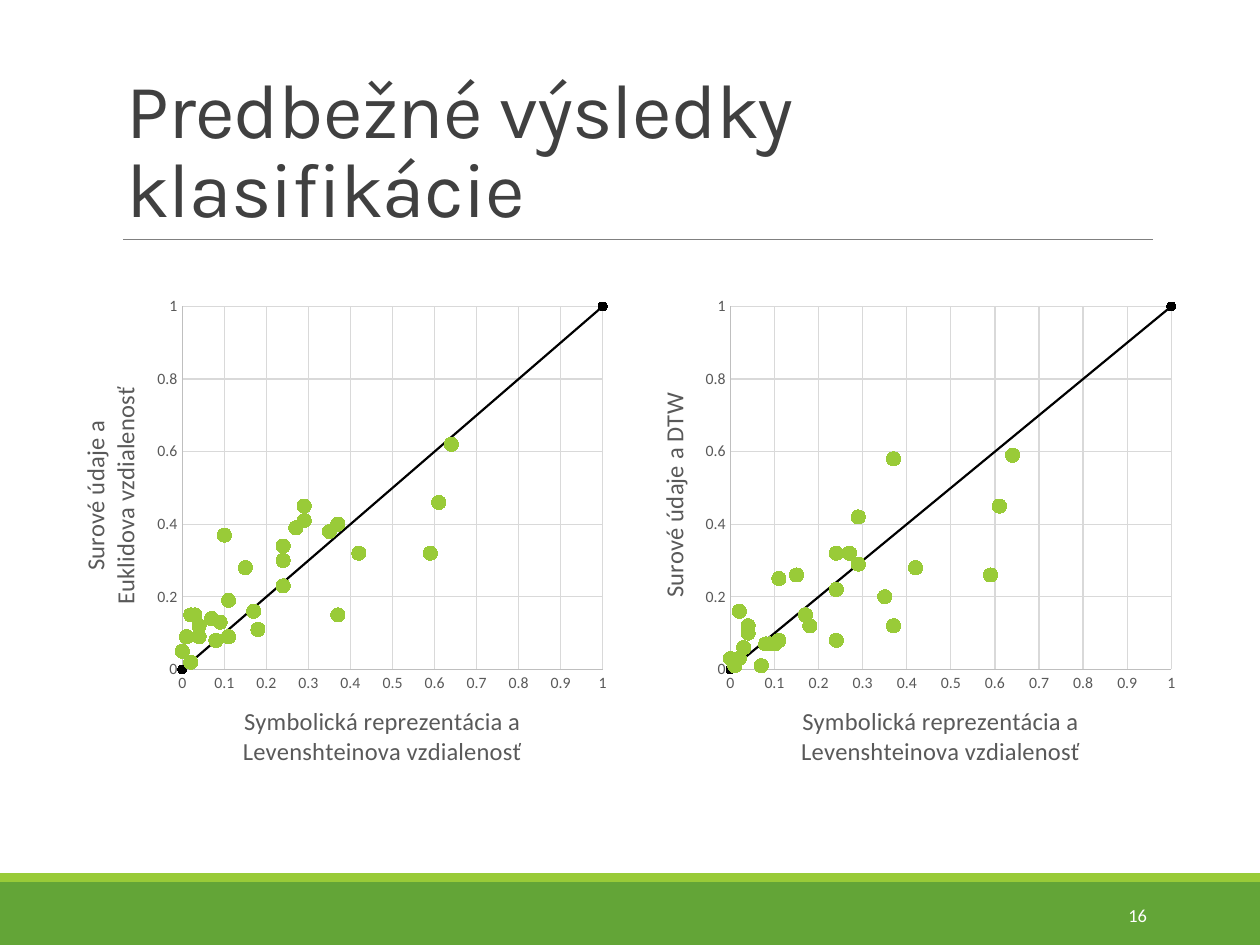
from dataclasses import dataclass

from lxml.etree import SubElement
from pptx import Presentation
from pptx.chart.data import XyChartData
from pptx.dml.color import RGBColor
from pptx.enum.chart import XL_CHART_TYPE as ChartType, XL_MARKER_STYLE as Marker
from pptx.enum.chart import XL_TICK_MARK as Tick
from pptx.enum.shapes import MSO_CONNECTOR as Connector, MSO_SHAPE as Shape
from pptx.enum.text import MSO_ANCHOR as Anchor, PP_ALIGN as Align
from pptx.oxml.ns import qn
from pptx.util import Inches, Pt


@dataclass(frozen=True)
class Theme:
    green: str = "63A537"
    lime: str = "99CB38"
    rule: str = "808080"
    heading: str = "404040"
    label: str = "595959"
    axis: str = "BFBFBF"
    grid: str = "D9D9D9"
    black: str = "000000"
    white: str = "FFFFFF"
    heading_font: str = "Karla"
    body_font: str = "Calibri"
    heading_size: float = 44
    axis_title_size: float = 14
    number_size: float = 10.5
    chart_size: float = 10
    tick_size: float = 9


@dataclass(frozen=True)
class Area:
    """A place on the slide grid of 100 columns by 75 rows."""
    column: float
    row: float
    columns: float
    rows: float

    def lengths(self) -> list[int]:
        return [Inches(n / 10) for n in (self.column, self.row, self.columns, self.rows)]


@dataclass(frozen=True)
class ScatterPanel:
    """Layouts are shares of the chart's own size."""
    area: Area
    y_title: str
    y_values: tuple[float, ...]
    plot: dict[str, float]
    x_title_at: dict[str, float]
    y_title_at: dict[str, float]


THEME = Theme()
X_TITLE = "Symbolická reprezentácia a\nLevenshteinova vzdialenosť"
# None marks a data set without a symbolic result
X_VALUES = (0.29, 0.61, 0.37, 0.15, 0.01, None, None, 0.11, 0.02, 0.17,
            0.04, 0.02, 0.24, 0.59, 0.03, 0.64, None, None, 0.24, 0.35,
            None, 0.42, 0.18, 0.37, 0.29, 0, 0.08, 0.11, None, 0.24,
            0.04, 0.07, 0.1, 0.09, None, None, 0.27, None)
PANELS = (
    ScatterPanel(
        Area(50, 22.7, 44.3, 40.6), "Surové údaje a DTW",
        (0.29, 0.45, 0.58, 0.26, 0.01, 0.35, 0, 0.25, 0.03, 0.15,
         0.12, 0.16, 0.08, 0.26, 0.06, 0.59, 0.6, 0.06, 0.32, 0.2,
         0.04, 0.28, 0.12, 0.12, 0.42, 0.03, 0.07, 0.08, 0, 0.22,
         0.1, 0.01, 0.07, 0.07, 0, 0, 0.32, 0.15),
        {"x": 0.18, "y": 0.04, "w": 0.79, "h": 0.71},
        {"x": 0.3, "y": 0.81}, {"x": 0.04, "y": 0.2}),
    ScatterPanel(
        Area(4.1, 22.7, 45.1, 40.6), "Surové údaje a\nEuklidova vzdialenosť",
        (0.41, 0.46, 0.4, 0.28, 0.09, 0.35, 0.05, 0.19, 0.02, 0.16,
         0.12, 0.15, 0.23, 0.32, 0.15, 0.62, 0.66, 0.04, 0.34, 0.38,
         0.03, 0.32, 0.11, 0.15, 0.45, 0.05, 0.08, 0.09, 0.14, 0.3,
         0.09, 0.14, 0.37, 0.13, 0.1, 0.01, 0.39, 0.16),
        {"x": 0.23, "y": 0.04, "w": 0.74, "h": 0.71},
        {"x": 0.33, "y": 0.81}, {"x": 0.04, "y": 0.19}),
)


def apply(target, **values) -> None:
    for name, value in values.items():
        setattr(target, name, value)


def style_font(font, name: str, size: float, color: str) -> None:
    apply(font, name=name, size=Pt(size), bold=False)
    font.color.rgb = RGBColor.from_string(color)


def style_fill(fill, color: str) -> None:
    fill.solid()
    fill.fore_color.rgb = RGBColor.from_string(color)


def style_line(line, color: str, width: float) -> None:
    style_fill(line.fill, color)
    line.width = Pt(width)


def add_band(page, area: Area, color: str) -> None:
    band = page.shapes.add_shape(Shape.RECTANGLE, *area.lengths())
    band.shadow.inherit = False
    style_fill(band.fill, color)
    band.line.fill.background()


def add_rule(page, area: Area) -> None:
    left, top, width, height = area.lengths()
    rule = page.shapes.add_connector(Connector.STRAIGHT, left, top, left + width, top + height)
    style_line(rule.line, THEME.rule, 0.5)
    SubElement(rule._element.spPr, qn("a:effectLst"))


def add_text(page, area: Area, text: str, font: tuple, anchor, align, spacing: float = 1):
    box = page.shapes.add_textbox(*area.lengths())
    apply(box.text_frame, word_wrap=True, vertical_anchor=anchor)
    para = box.text_frame.paragraphs[0]
    apply(para, alignment=align, line_spacing=spacing)
    span = para.add_run()
    span.text = text
    style_font(span.font, *font)
    return span


def set_layout(parent, shares: dict[str, float], inner: bool = False) -> None:
    manual = SubElement(parent.find(qn("c:layout")), qn("c:manualLayout"))
    settings = {"layoutTarget": "inner"} if inner else {}
    settings |= {f"{key}Mode": "edge" for key in ("x", "y")} | shares
    for tag, value in settings.items():
        SubElement(manual, qn(f"c:{tag}")).set("val", str(value))


def style_axis(axis, title: str, title_at: dict[str, float], step: float, turn: int) -> None:
    apply(axis, minimum_scale=0, maximum_scale=1, major_unit=step, has_major_gridlines=True,
          major_tick_mark=Tick.NONE, minor_tick_mark=Tick.NONE)
    style_line(axis.format.line, THEME.axis, 0.75)
    style_line(axis.major_gridlines.format.line, THEME.grid, 0.75)
    apply(axis.tick_labels, number_format="General", number_format_is_linked=False)
    style_font(axis.tick_labels.font, THEME.body_font, THEME.tick_size, THEME.label)
    frame = axis.axis_title.text_frame
    frame.text = title
    frame._txBody.bodyPr.set("rot", str(turn * 60000))
    for para in frame.paragraphs:
        style_font(para.font, THEME.body_font, THEME.axis_title_size, THEME.label)
    set_layout(axis.axis_title._element, title_at)


def style_marker(marker, size: int, color: str) -> None:
    apply(marker, style=Marker.CIRCLE, size=size)
    style_fill(marker.format.fill, color)
    marker.format.line.fill.background()


def add_scatter(page, panel: ScatterPanel) -> None:
    data = XyChartData()
    sources = {"Series 1": zip(X_VALUES, panel.y_values), "Series 2": ((0, 0), (1, 1))}
    for name, points in sources.items():
        series = data.add_series(name)
        for x, y in points:
            series.add_data_point(x, y)
    chart = page.shapes.add_chart(ChartType.XY_SCATTER, *panel.area.lengths(), data).chart
    apply(chart, has_title=False, has_legend=False)
    style_font(chart.font, THEME.body_font, THEME.chart_size, THEME.black)
    chart.plots[0].vary_by_categories = False
    style_axis(chart.category_axis, X_TITLE, panel.x_title_at, 0.1, 0)
    style_axis(chart.value_axis, panel.y_title, panel.y_title_at, 0.2, -90)

    # Measured points and the line of equal results
    measured, diagonal = chart.plots[0].series
    measured.format.line.fill.background()
    style_marker(measured.marker, 8, THEME.lime)
    style_line(diagonal.format.line, THEME.black, 1.25)
    style_marker(diagonal.marker, 5, THEME.black)

    # Missing values become gaps
    for point in list(measured._element.iter(qn("c:pt"))):
        if point.findtext(qn("c:v")) == "None":
            point.getparent().remove(point)

    plot_area = chart._chartSpace.chart.plotArea
    if plot_area.find(qn("c:layout")) is None:
        plot_area.insert(0, plot_area.makeelement(qn("c:layout")))
    set_layout(plot_area, panel.plot, inner=True)


def main() -> None:
    deck = Presentation()
    apply(deck, slide_width=Inches(10), slide_height=Inches(7.5))
    page = deck.slides.add_slide(deck.slide_layouts[6])

    # Footer bands and title rule
    add_band(page, Area(0, 70, 100, 5), THEME.green)
    add_band(page, Area(0, 69.3, 100, 0.7), THEME.lime)
    add_rule(page, Area(9.8, 19, 81.7, 0))

    # Title
    title = add_text(page, Area(9.05, 3.1, 82.5, 15.9), "Predbežné výsledky klasifikácie",
                     (THEME.heading_font, THEME.heading_size, THEME.heading),
                     Anchor.BOTTOM, Align.LEFT, 0.85)
    title.font._element.set("spc", "-50")

    # Comparison charts
    for panel in PANELS:
        add_scatter(page, panel)

    # Page number
    add_text(page, Area(81.2, 70.6, 10.8, 4), "16",
             (THEME.body_font, THEME.number_size, THEME.white), Anchor.MIDDLE, Align.RIGHT)
    deck.save("out.pptx")


if __name__ == "__main__":
    main()
